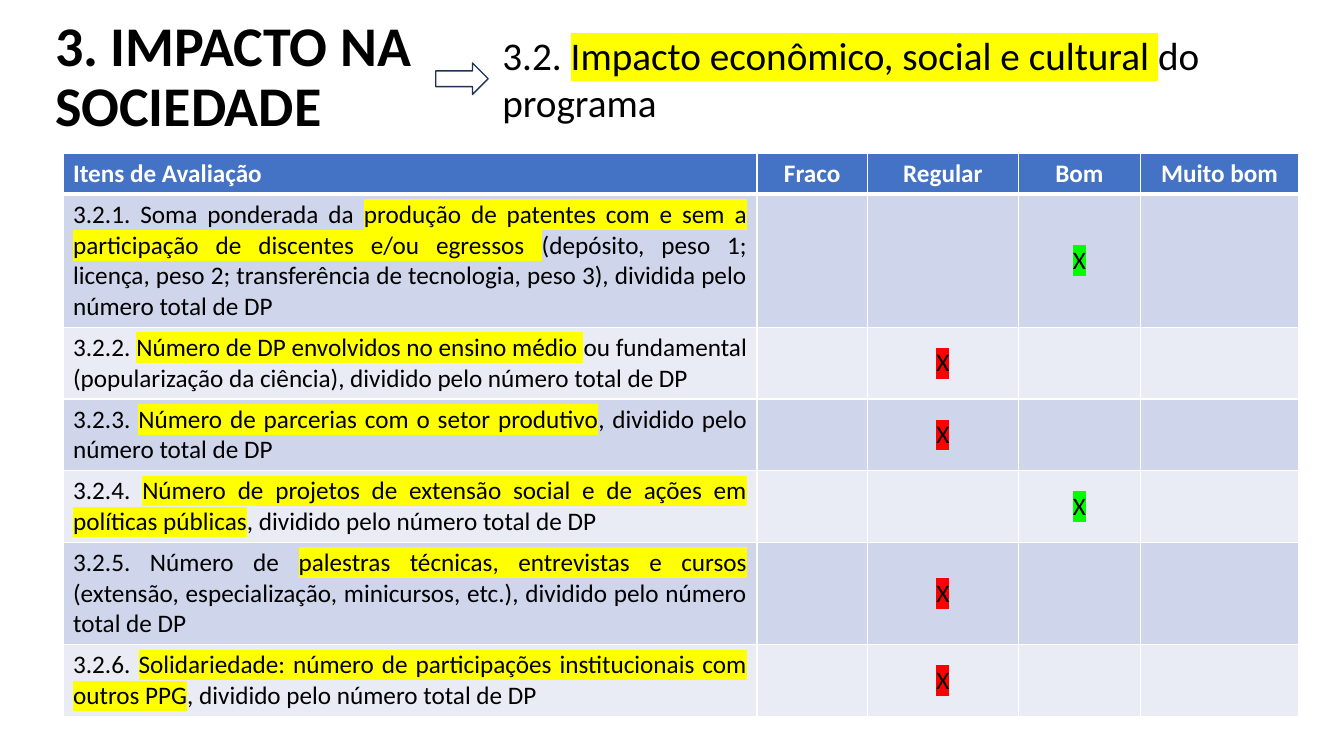
from lxml.etree import SubElement as Sub
from pptx import Presentation
from pptx.dml.color import RGBColor as Rgb
from pptx.enum.shapes import MSO_SHAPE as Form
from pptx.enum.text import MSO_ANCHOR as Anchor, MSO_AUTO_SIZE as Fit, PP_ALIGN as Align
from pptx.oxml.ns import qn
from pptx.util import Pt

SCALE = 9525  # EMU in one px
FONT = "Calibri"

WHITE = Rgb(0xFF, 0xFF, 0xFF)
BLACK = Rgb(0, 0, 0)
BLUE = Rgb(0x44, 0x72, 0xC4)
NAVY = Rgb(0x1E, 0x32, 0x56)
BANDS = Rgb(0xCF, 0xD5, 0xEA), Rgb(0xE9, 0xEB, 0xF5)
YELLOW = Rgb(0xFF, 0xFF, 0)
GREEN = Rgb(0, 0xFF, 0)
RED = Rgb(0xFF, 0, 0)

HEAD = ["Itens de Avaliação", "Fraco", "Regular", "Bom", "Muito bom"]
WIDTHS = [661, 105, 144, 116, 151]
ROW = 39
MARKS = {"Regular": RED, "Bom": GREEN}

# Text between bars is highlighted; the second value is the grade
ITEMS = [
    ("3.2.1. Soma ponderada da |produção de patentes com e sem a participação de "
     "discentes e/ou egressos |(depósito, peso 1; licença, peso 2; transferência de "
     "tecnologia, peso 3), dividida pelo número total de DP", "Bom"),
    ("3.2.2. |Número de DP envolvidos no ensino médio |ou fundamental "
     "(popularização da ciência), dividido pelo número total de DP", "Regular"),
    ("3.2.3. |Número de parcerias com o setor produtivo|, dividido pelo "
     "número total de DP", "Regular"),
    ("3.2.4. |Número de projetos de extensão social e de ações em políticas "
     "públicas|, dividido pelo número total de DP", "Bom"),
    ("3.2.5. Número de |palestras técnicas, entrevistas e cursos |(extensão, "
     "especialização, minicursos, etc.), dividido pelo número total de DP", "Regular"),
    ("3.2.6. |Solidariedade: número de participações institucionais com outros "
     "PPG|, dividido pelo número total de DP", "Regular"),
]


def px(*vals):
    return [int(v * SCALE) for v in vals]


def solid(node, color):
    fill = Sub(node, qn("a:solidFill"))
    Sub(fill, qn("a:srgbClr"), val=str(color))


def write(frame, text, size=18, color=BLACK, bold=False, align=Align.LEFT,
          mark=YELLOW, lead=None):
    para = frame.paragraphs[0]
    para.alignment = align
    if lead:
        para.line_spacing = lead
    for i, part in enumerate(text.split("|")):
        if not part:
            continue
        run = para.add_run()
        run.text = part
        font = run.font
        font.size, font.bold = Pt(size), bold
        font.color.rgb = color
        if i % 2:
            light = Sub(run._r.get_or_add_rPr(), qn("a:highlight"))
            Sub(light, qn("a:srgbClr"), val=str(mark))
        font.name = FONT


def add_text(slide, box, text, anchor=Anchor.TOP, fit=Fit.NONE, **style):
    frame = slide.shapes.add_textbox(*px(*box)).text_frame
    frame.word_wrap = True
    frame.auto_size = fit
    frame.vertical_anchor = anchor
    write(frame, text, **style)


def add_arrow(slide, box):
    arrow = slide.shapes.add_shape(Form.RIGHT_ARROW, *px(*box))
    arrow.shadow.inherit = False
    arrow.fill.background()
    arrow.line.color.rgb = NAVY
    arrow.line.width = Pt(1)


def paint(cell, color, top=1, bottom=1):
    props = cell._tc.get_or_add_tcPr()
    for side, width in zip("LRTB", (1, 1, top, bottom)):
        solid(Sub(props, qn("a:ln" + side), w=str(Pt(width))), WHITE)
    cell.fill.solid()
    cell.fill.fore_color.rgb = color


def add_grid(slide, box):
    shape = slide.shapes.add_table(len(ITEMS) + 1, len(HEAD), *px(*box))
    table = shape.table
    for col, width in zip(table.columns, px(*WIDTHS)):
        col.width = width
    for row in table.rows:
        row.height = px(ROW)[0]
    shape.height = px(box[3])[0]

    # Header
    for c, name in enumerate(HEAD):
        cell = table.cell(0, c)
        paint(cell, BLUE, bottom=3)
        cell.vertical_anchor = Anchor.MIDDLE if c else Anchor.TOP
        write(cell.text_frame, name, color=WHITE, bold=True,
              align=Align.CENTER if c else Align.LEFT)

    # Items and their grades
    for r, (item, grade) in enumerate(ITEMS, 1):
        for c in range(len(HEAD)):
            paint(table.cell(r, c), BANDS[(r - 1) % 2], top=3 if r == 1 else 1)
        write(table.cell(r, 0).text_frame, item, align=Align.JUSTIFY)
        cell = table.cell(r, HEAD.index(grade))
        cell.vertical_anchor = Anchor.MIDDLE
        write(cell.text_frame, "|X", align=Align.CENTER, mark=MARKS[grade])


def main():
    deck = Presentation()
    deck.slide_width, deck.slide_height = px(1280, 720)
    slide = deck.slides.add_slide(deck.slide_layouts[6])
    add_text(slide, (43, 5, 367, 139), "3. IMPACTO NA SOCIEDADE",
             anchor=Anchor.MIDDLE, size=40, bold=True, lead=0.9)
    add_grid(slide, (60, 146, sum(WIDTHS), 558))
    add_text(slide, (469, 25, 784, 100),
             "3.2. |Impacto econômico, social e cultural |do programa",
             fit=Fit.SHAPE_TO_FIT_TEXT, size=28)
    add_arrow(slide, (415, 60, 50, 30))
    deck.save("out.pptx")


if __name__ == "__main__":
    main()
